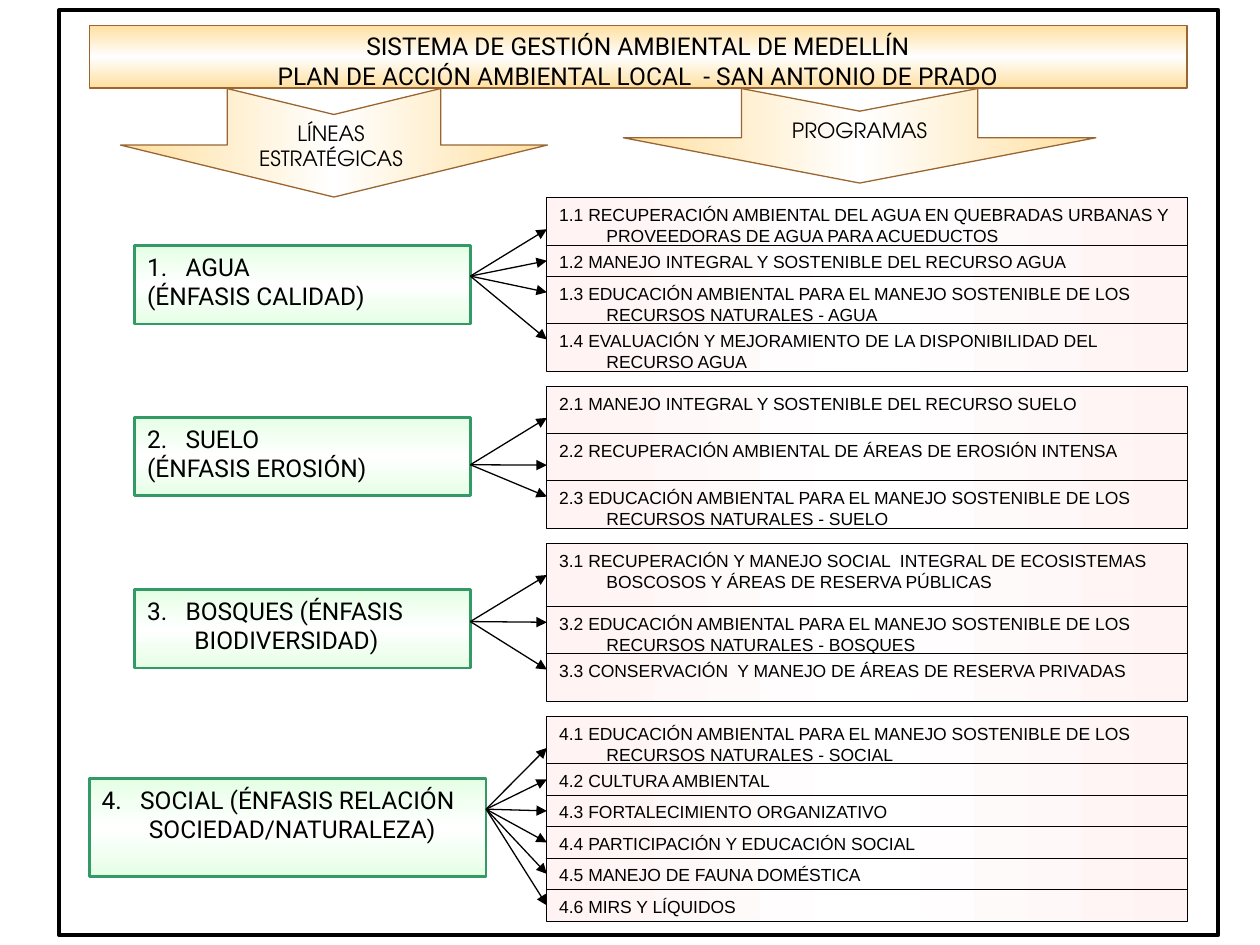
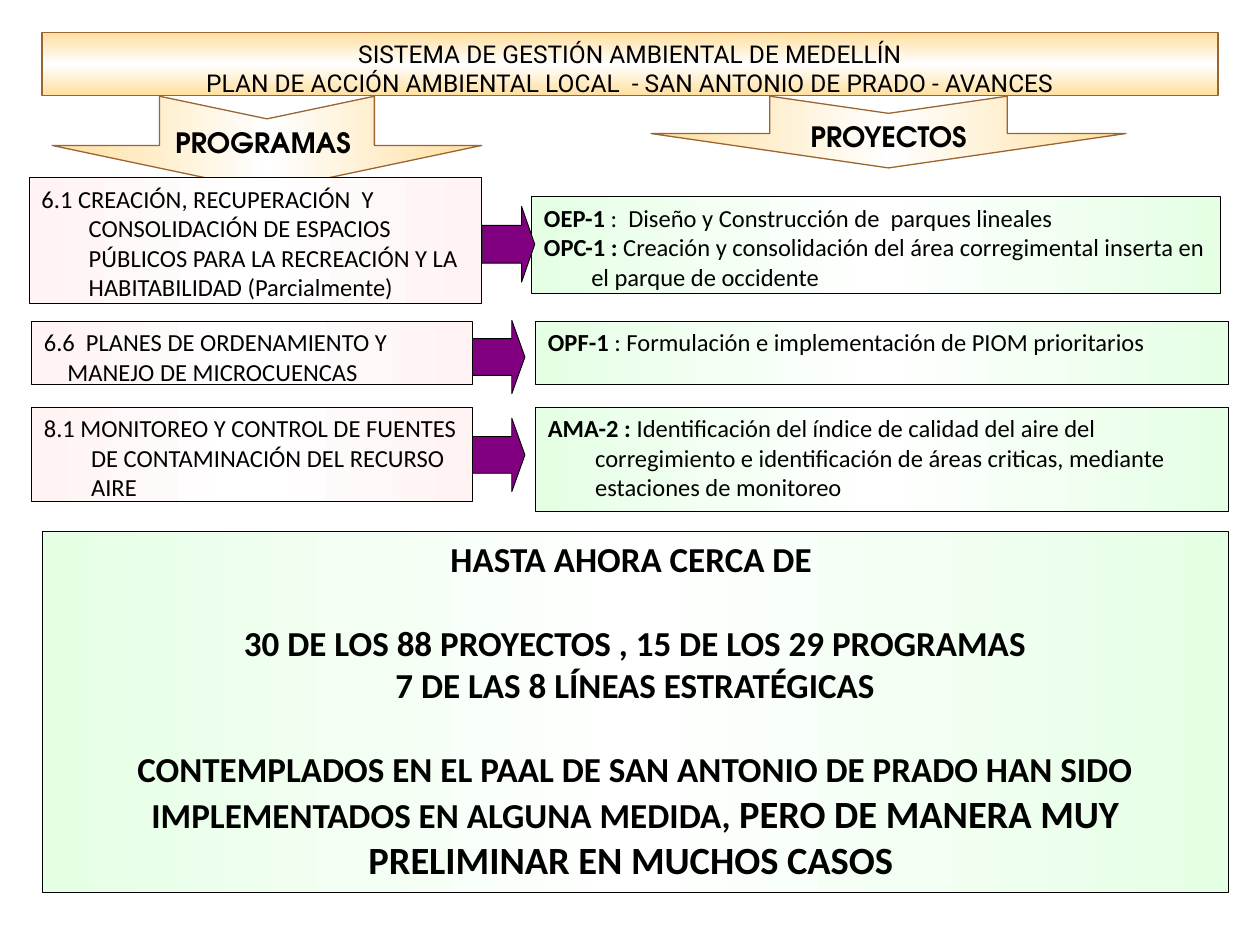
from lxml import etree
from pptx import Presentation
from pptx.dml.color import RGBColor
from pptx.enum import shapes, text
from pptx.oxml import ns
from pptx.util import Pt

BLACK, BROWN, GREEN, PURPLE = "000000", "996633", "339966", "800080"
GOLD, MINT, ROSE = "FFDF9F", "E5FFE5", "FFF3F3"
HANGING = 27
BOLD = {"bold": True}

TITLE = "SISTEMA DE GESTIÓN AMBIENTAL DE MEDELLÍN"
PLAN = "PLAN DE ACCIÓN AMBIENTAL LOCAL  - SAN ANTONIO DE PRADO"

# Strategic lines: box (left, top, width, height), paragraphs, fan origin height,
# programmes as (text, row height, arrow tip below the row top)
STRATEGIC_LINES = [
    ((77, 140.4, 191.8, 44.8), ["1.   AGUA", "(ÉNFASIS CALIDAD)"], 157.8, [
        ("1.1 RECUPERACIÓN AMBIENTAL DEL AGUA EN QUEBRADAS URBANAS Y PROVEEDORAS DE AGUA PARA ACUEDUCTOS", 27, 18),
        ("1.2 MANEJO INTEGRAL Y SOSTENIBLE DEL RECURSO AGUA", 18, 9),
        ("1.3 EDUCACIÓN AMBIENTAL PARA EL MANEJO SOSTENIBLE DE LOS RECURSOS NATURALES - AGUA", 27, 9),
        ("1.4 EVALUACIÓN Y MEJORAMIENTO DE LA DISPONIBILIDAD DEL RECURSO AGUA", 27, 9),
    ]),
    ((77, 238.5, 191.8, 44.8), ["2.   SUELO", "(ÉNFASIS EROSIÓN)"], 265.6, [
        ("2.1 MANEJO INTEGRAL Y SOSTENIBLE DEL RECURSO SUELO", 27, 18),
        ("2.2 RECUPERACIÓN AMBIENTAL DE ÁREAS DE EROSIÓN INTENSA", 27, 18),
        ("2.3 EDUCACIÓN AMBIENTAL PARA EL MANEJO SOSTENIBLE DE LOS RECURSOS NATURALES - SUELO", 27, 9),
    ]),
    ((77, 337, 191.8, 44.8), ["3.   BOSQUES (ÉNFASIS BIODIVERSIDAD)"], 355.2, [
        ("3.1 RECUPERACIÓN Y MANEJO SOCIAL  INTEGRAL DE ECOSISTEMAS BOSCOSOS Y ÁREAS DE RESERVA PÚBLICAS", 36, 18),
        ("3.2 EDUCACIÓN AMBIENTAL PARA EL MANEJO SOSTENIBLE DE LOS RECURSOS NATURALES - BOSQUES", 27, 9),
        ("3.3 CONSERVACIÓN  Y MANEJO DE ÁREAS DE RESERVA PRIVADAS", 27, 9),
    ]),
    ((51, 444.8, 226.8, 56.2), ["4.   SOCIAL (ÉNFASIS RELACIÓN  SOCIEDAD/NATURALEZA)"], 462.4, [
        ("4.1 EDUCACIÓN AMBIENTAL PARA EL MANEJO SOSTENIBLE DE LOS RECURSOS NATURALES - SOCIAL", 27, 18),
        ("4.2 CULTURA AMBIENTAL", 18, 9),
        ("4.3 FORTALECIMIENTO ORGANIZATIVO", 18, 9),
        ("4.4 PARTICIPACIÓN Y EDUCACIÓN SOCIAL", 18, 9),
        ("4.5 MANEJO DE FAUNA DOMÉSTICA", 18, 9),
        ("4.6 MIRS Y LÍQUIDOS", 18, 9),
    ]),
]
PROGRAM_LEFT, PROGRAM_WIDTH = 312.5, 366
PROGRAM_TOP, GROUP_GAP = 113, 8.8

# Progress: programme box, text, hanging indent, arrow box, project box, project paragraphs
PROGRESS = [
    ((18, 183.6, 252, 36),
     "6.6  PLANES DE ORDENAMIENTO Y MANEJO DE MICROCUENCAS", 13.5,
     (270, 183, 30, 42), (306, 183.6, 396, 36),
     [[("OPF-1", BOLD), (" : Formulación e implementación de PIOM prioritarios", {})]]),
    ((18, 232.6, 252, 54),
     "8.1 MONITOREO Y CONTROL DE FUENTES DE CONTAMINACIÓN DEL RECURSO AIRE", HANGING,
     (270, 239, 30, 42), (306, 232.6, 396, 59.6),
     [[("AMA-2 :", BOLD), (" Identificación del índice de calidad del aire del corregimiento "
                          "e identificación de áreas criticas, mediante estaciones de monitoreo", {})]]),
    ((16.6, 101.5, 258.6, 72),
     "6.1 CREACIÓN, RECUPERACIÓN  Y CONSOLIDACIÓN DE ESPACIOS PÚBLICOS PARA LA RECREACIÓN "
     "Y LA HABITABILIDAD (Parcialmente)", HANGING,
     (275.6, 118, 30, 43.2), (303.8, 112.3, 393.8, 55.6),
     [[("OEP-1", BOLD), (" :  Diseño y Construcción de  parques lineales", {})],
      [("OPC-1 :", BOLD), (" Creación y consolidación del área corregimental inserta en el parque de occidente", {})]]),
]
SUMMARY = [
    "HASTA AHORA CERCA DE ",
    "30 DE LOS 88 PROYECTOS , 15 DE LOS 29 PROGRAMAS",
    "7 DE LAS 8 LÍNEAS ESTRATÉGICAS",
    [("CONTEMPLADOS EN EL PAAL DE SAN ANTONIO DE PRADO HAN SIDO IMPLEMENTADOS EN ALGUNA MEDIDA, ", {}),
     ("PERO DE MANERA MUY PRELIMINAR EN MUCHOS CASOS ", {"size": Pt(22)})],
]


def color(value):
    return RGBColor.from_string(value)


def add_xml(parent, tag, **attributes):
    return etree.SubElement(parent, ns.qn(tag), attributes)


def fill_gradient(shape, edge, angle):
    """Fade from the edge colour to white and back."""
    shape.fill.gradient()
    gradient = shape.element.spPr.find(ns.qn("a:gradFill"))
    for child in list(gradient):
        gradient.remove(child)
    gradient.set("rotWithShape", "1")
    stops = add_xml(gradient, "a:gsLst")
    for position, value in ((0, edge), (50, "FFFFFF"), (100, edge)):
        stop = add_xml(stops, "a:gs", pos=str(position * 1000))
        add_xml(stop, "a:srgbClr", val=value)
    add_xml(gradient, "a:lin", ang=str(angle * 60000), scaled="1")


def add_block(page, kind, bounds, line, weight):
    shape = page.shapes.add_shape(kind, *map(Pt, bounds))
    shape.shadow.inherit = False
    shape.line.color.rgb = color(line)
    shape.line.width = Pt(weight)
    return shape


def write(shape, paragraphs, font, size, bold=False, hanging=0, centered=False):
    """Each paragraph is a string or a list of (text, font settings)."""
    frame = shape.text_frame
    frame.word_wrap = True
    frame.vertical_anchor = text.MSO_ANCHOR.TOP
    for index, content in enumerate(paragraphs):
        para = frame.paragraphs[0] if index == 0 else frame.add_paragraph()
        para.alignment = text.PP_ALIGN.CENTER if centered else text.PP_ALIGN.LEFT
        para.font.name, para.font.size, para.font.bold = font, Pt(size), bold
        para.font.color.rgb = color(BLACK)
        if hanging:
            properties = para._p.get_or_add_pPr()
            properties.set("marL", str(Pt(hanging)))
            properties.set("indent", str(-Pt(hanging)))
        for words, settings in [(content, {})] if isinstance(content, str) else content:
            span = para.add_run()
            span.text = words
            for name, value in settings.items():
                setattr(span.font, name, value)


def add_panel(page, bounds, edge, paragraphs, font, size,
              line=BLACK, weight=0.5, angle=0, **style):
    panel = add_block(page, shapes.MSO_SHAPE.RECTANGLE, bounds, line, weight)
    fill_gradient(panel, edge, angle)
    write(panel, paragraphs, font, size, **style)
    return panel


def add_banner(page, bounds, paragraphs):
    add_panel(page, bounds, GOLD, paragraphs, "Roboto", 14, BROWN, 0.75, 90, centered=True)


def add_heading_arrow(page, bounds, paragraphs, size, bold=False):
    """Notched arrow that points down inside the bounds, with upright text."""
    left, top, width, height = bounds
    shift = (width - height) / 2
    arrow = add_block(page, shapes.MSO_SHAPE.NOTCHED_RIGHT_ARROW,
                      (left + shift, top - shift, height, width), BROWN, 0.75)
    arrow.rotation = 90
    arrow.adjustments[0], arrow.adjustments[1] = 0.5, 0.479
    fill_gradient(arrow, GOLD, 90)
    frame = arrow.text_frame
    frame.margin_left = frame.margin_right = frame.margin_top = frame.margin_bottom = Pt(3.6)
    write(arrow, paragraphs, "TeX Gyre Adventor", size, bold, centered=True)
    frame._txBody.bodyPr.set("vert", "vert270")


def add_pointer(page, start, end):
    pointer = page.shapes.add_connector(shapes.MSO_CONNECTOR.STRAIGHT, *map(Pt, start + end))
    pointer.line.color.rgb = color(BLACK)
    pointer.line.width = Pt(0.75)
    add_xml(pointer.line._get_or_add_ln(), "a:tailEnd", type="triangle")
    add_xml(pointer.element.spPr, "a:effectLst")


def build_strategic_lines(page):
    frame = add_block(page, shapes.MSO_SHAPE.RECTANGLE, (33.8, 5.8, 662.4, 528.5), BLACK, 2.5)
    frame.fill.background()
    add_banner(page, (51, 14.4, 627.3, 36), [TITLE, PLAN])
    add_heading_arrow(page, (68.8, 50.6, 244, 62), ["LÍNEAS ", "ESTRATÉGICAS "], 12)
    add_heading_arrow(page, (356.2, 50.6, 270, 54), ["PROGRAMAS"], 12)
    top = PROGRAM_TOP
    for bounds, name, origin, programs in STRATEGIC_LINES:
        add_panel(page, bounds, MINT, name, "Roboto", 14, GREEN, 1.5, 90, hanging=HANGING)
        fan_start = (bounds[0] + bounds[2], origin)
        for program, height, tip in programs:
            add_panel(page, (PROGRAM_LEFT, top, PROGRAM_WIDTH, height), ROSE,
                      [program], "Arial", 10, hanging=HANGING)
            add_pointer(page, fan_start, (PROGRAM_LEFT, top + tip))
            top += height
        top += GROUP_GAP


def build_progress(page):
    add_banner(page, (24, 18.7, 672, 36), [TITLE, PLAN + " - AVANCES"])
    add_heading_arrow(page, (29.8, 55, 245.5, 54), ["PROGRAMAS "], 16, True)
    add_heading_arrow(page, (372, 55, 271.4, 41), ["PROYECTOS"], 16, True)
    for program_box, program, hanging, arrow_box, project_box, projects in PROGRESS:
        add_panel(page, program_box, ROSE, [program], "Calibri", 14, hanging=hanging)
        add_panel(page, project_box, MINT, projects, "Calibri", 14, hanging=HANGING)
        arrow = add_block(page, shapes.MSO_SHAPE.RIGHT_ARROW, arrow_box, BLACK, 0.5)
        arrow.adjustments[0], arrow.adjustments[1] = 0.5, 0.25
        arrow.fill.solid()
        arrow.fill.fore_color.rgb = color(PURPLE)
    summary = add_panel(page, (24, 303.8, 678, 206), MINT, SUMMARY, "Calibri", 20,
                        bold=True, centered=True)
    for index in (1, 3):
        summary.text_frame.paragraphs[index].space_before = Pt(24)


def main():
    deck = Presentation()
    deck.slide_width, deck.slide_height = Pt(720), Pt(540)
    for build in (build_strategic_lines, build_progress):
        build(deck.slides.add_slide(deck.slide_layouts[6]))
    deck.save("out.pptx")


if __name__ == "__main__":
    main()
